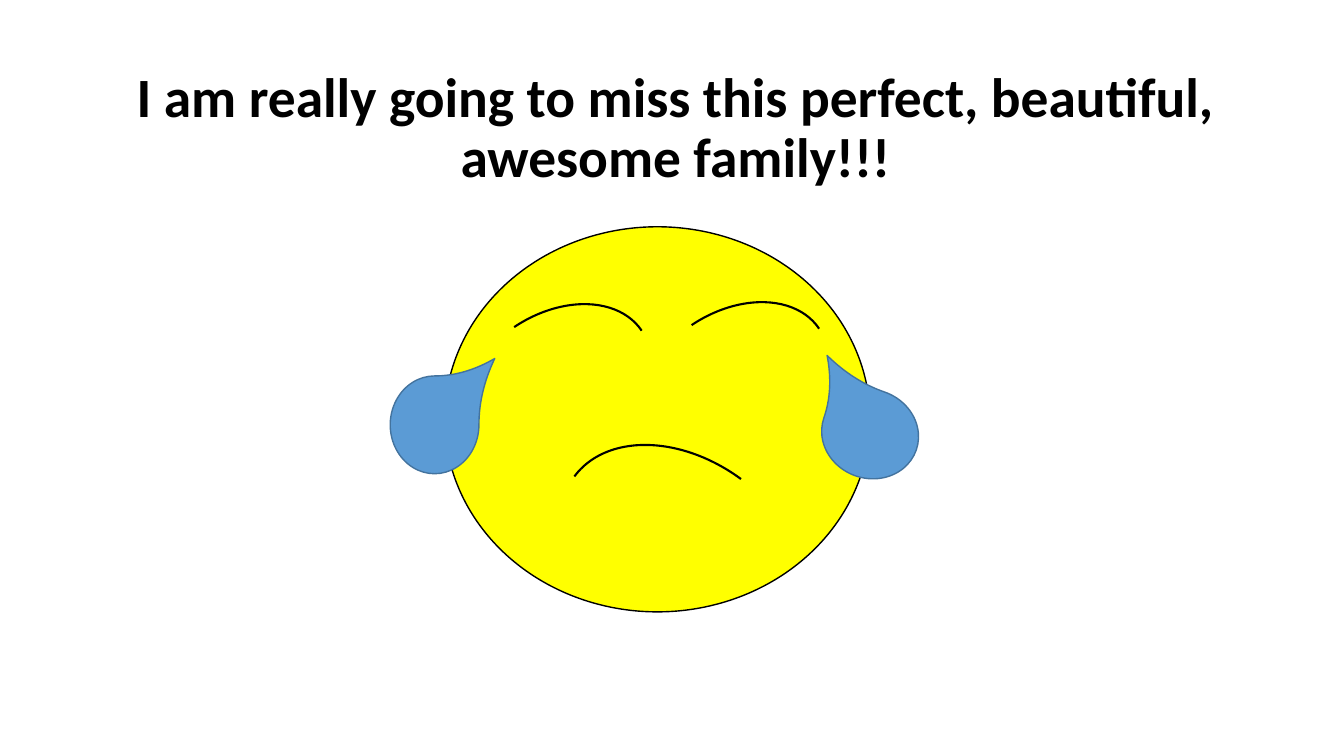
from pptx import Presentation
from pptx.dml.color import RGBColor
from pptx.enum.shapes import MSO_SHAPE
from pptx.enum.text import MSO_ANCHOR, MSO_AUTO_SIZE, PP_ALIGN
from pptx.util import Inches, Pt

ELLIPSE, ARC, TEARDROP = MSO_SHAPE.OVAL, MSO_SHAPE.ARC, MSO_SHAPE.TEAR
BOTTOM, CENTER, NO_FIT = MSO_ANCHOR.BOTTOM, PP_ALIGN.CENTER, MSO_AUTO_SIZE.NONE

BLACK = RGBColor(0x00, 0x00, 0x00)
YELLOW = RGBColor(0xFF, 0xFF, 0x00)
BLUE = RGBColor(0x5B, 0x9B, 0xD5)
DARK_BLUE = RGBColor(0x43, 0x73, 0x9E)
TITLE_ONLY = 5


def write_text(frame, text, *, font, size, color, bold=False, align=CENTER, spacing=1.0):
    para = frame.paragraphs[0]
    para.alignment = align
    para.line_spacing = spacing
    span = para.add_run()
    span.text = text
    span.font.name = font
    span.font.size = Pt(size)
    span.font.bold = bold
    span.font.color.rgb = color


class SlideBuilder:
    """Holds the style and the current slide."""

    font = "Calibri"

    def __init__(self, deck):
        self.page = deck.slides.add_slide(deck.slide_layouts[TITLE_ONLY])

    def title(self, text, left, top, width, height, *, size, bottom_margin):
        box = self.page.shapes.title
        box.left, box.top = Inches(left), Inches(top)
        box.width, box.height = Inches(width), Inches(height)
        frame = box.text_frame
        frame.word_wrap = True
        frame.auto_size = NO_FIT
        frame.vertical_anchor = BOTTOM
        frame.margin_bottom = Inches(bottom_margin)
        write_text(frame, text, font=self.font, size=size, color=BLACK,
                   bold=True, spacing=0.9)

    def shape(self, kind, left, top, width, height, *, fill=None, line=BLACK,
              weight=1, rotation=0):
        shape = self.page.shapes.add_shape(
            kind, Inches(left), Inches(top), Inches(width), Inches(height))
        shape.shadow.inherit = False
        shape.rotation = rotation
        if fill is None:
            shape.fill.background()
        else:
            shape.fill.solid()
            shape.fill.fore_color.rgb = fill
        shape.line.color.rgb = line
        shape.line.width = Pt(weight)
        return shape

    def curve(self, left, top, width, height, rotation):
        self.shape(ARC, left, top, width, height, weight=1.5, rotation=rotation)

    def tear(self, left, top, rotation=0):
        drop = self.shape(TEARDROP, left, top, 0.88, 0.97, fill=BLUE,
                          line=DARK_BLUE, rotation=rotation)
        drop.adjustments[0] = 1.356


def main():
    deck = Presentation()
    deck.slide_width, deck.slide_height = Inches(13.33), Inches(7.5)
    slide = SlideBuilder(deck)

    # Title, set high in its box
    slide.title("I am really going to miss this perfect, beautiful, awesome family!!!",
                0.95, 0.86, 11.5, 1.45, size=39.6, bottom_margin=0.43)

    # Face
    slide.shape(ELLIPSE, 4.41, 2.25, 4.22, 3.82, fill=YELLOW)

    # Closed eyes
    for left, top in ((6.24, 3.1), (4.48, 3.12)):
        slide.curve(left, top, 2.06, 1.47, rotation=326.1)

    # Sad mouth
    slide.curve(5.82, 4.18, 1.92, 2.69, rotation=306.4)

    # Tears
    slide.tear(3.87, 3.73)
    slide.tear(8.19, 3.82, rotation=289.1)

    deck.save("out.pptx")


if __name__ == "__main__":
    main()
